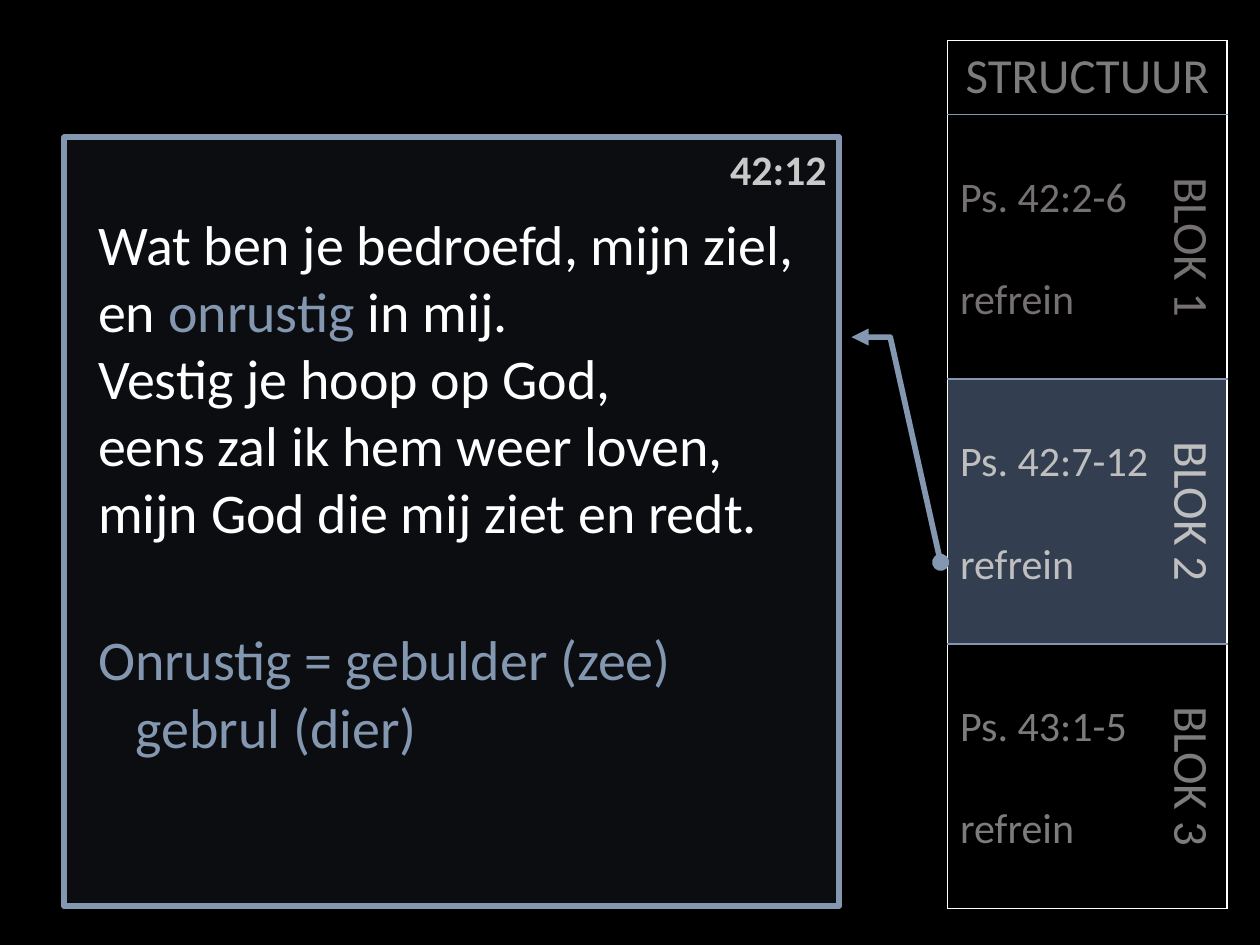
from pptx import Presentation
from pptx.dml.color import RGBColor
from pptx.enum.shapes import MSO_SHAPE
from pptx.enum.text import MSO_ANCHOR, PP_ALIGN
from pptx.oxml.ns import qn
from pptx.util import Inches, Pt
from lxml.etree import SubElement

FONT = "Calibri"
COLORS = {
    "black": "000000",
    "white": "FFFFFF",
    "blue": "8497B0",
    "panel": "222A35",
    "active": "333F50",
    "gray": "7C7C7C",
    "warm": "767171",
    "light": "BFBFBF",
    "verse": "C9C9C9",
}
BLOCKS = [
    ("Ps. 42:2-6", "BLOK 1", "warm", None),
    ("Ps. 42:7-12", "BLOK 2", "light", "active"),
    ("Ps. 43:1-5", "BLOK 3", "gray", None),
]
VERSE = [
    [("Wat ben je bedroefd, mijn ziel,", "white")],
    [("en ", "white"), ("onrustig ", "blue"), ("in mij.", "white")],
    [("Vestig je hoop op God,", "white")],
    [("eens zal ik hem weer loven,", "white")],
    [("mijn God die mij ziet en redt.", "white")],
]
BLANK_LINE = Pt(29.3)


def rgb(name):
    return RGBColor.from_string(COLORS[name])


def add_run(p, text, size, color, bold=False):
    r = p.add_run()
    r.text = text
    r.font.name = FONT
    r.font.size = Pt(size)
    r.font.bold = bold
    r.font.color.rgb = rgb(color)


def fill_text(tf, lines, size, align=PP_ALIGN.LEFT, bold=False):
    for i, runs in enumerate(lines):
        p = tf.paragraphs[0] if i == 0 else tf.add_paragraph()
        p.alignment = align
        for text, color in runs:
            add_run(p, text, size, color, bold)


def add_text(slide, box, lines, size, **style):
    tf = slide.shapes.add_textbox(*map(Inches, box)).text_frame
    tf.word_wrap = True
    fill_text(tf, lines, size, **style)
    return tf


def style_cell(cell, fill=None, **sides):
    tcPr = cell._tc.get_or_add_tcPr()
    for side in "LRTB":
        color = sides.get(side)
        ln = SubElement(tcPr, qn(f"a:ln{side}"), w=str(Pt(1)))
        if color:
            solid = SubElement(ln, qn("a:solidFill"))
            SubElement(solid, qn("a:srgbClr"), val=COLORS[color])
        else:
            SubElement(ln, qn("a:noFill"))
    if fill:
        cell.fill.solid()
        cell.fill.fore_color.rgb = rgb(fill)
    else:
        cell.fill.background()


def add_structure(slide, left, top, widths, heights):
    table = slide.shapes.add_table(
        len(heights), len(widths), Inches(left), Inches(top),
        Inches(sum(widths)), Inches(sum(heights))).table
    table.first_row = table.horz_banding = False
    for col, width in zip(table.columns, widths):
        col.width = Inches(width)
    for row, height in zip(table.rows, heights):
        row.height = Inches(height)

    header = table.cell(0, 0)
    header.merge(table.cell(0, 1))
    fill_text(header.text_frame, [[("STRUCTUUR", "gray")]], 28, PP_ALIGN.CENTER)
    style_cell(header, L="white", R="white", T="white", B="blue")
    style_cell(table.cell(0, 1), R="white", T="white", B="blue")

    for i, (psalm, block, color, fill) in enumerate(BLOCKS, 1):
        bottom = "white" if i == len(BLOCKS) else "blue"
        verses, label = table.cell(i, 0), table.cell(i, 1)
        verses.margin_top = Inches(0.05) + BLANK_LINE
        fill_text(verses.text_frame, [[(psalm, color)], [("refrein", color)]], 24)
        verses.text_frame.paragraphs[1].space_before = BLANK_LINE
        style_cell(verses, fill, L="white", T="blue", B=bottom)
        fill_text(label.text_frame, [[(block, color)]], 28, PP_ALIGN.CENTER)
        label.vertical_anchor = MSO_ANCHOR.MIDDLE
        label._tc.get_or_add_tcPr().set("vert", "vert")
        style_cell(label, fill, R="white", T="blue", B=bottom)


def add_callout(slide, box):
    sp = slide.shapes.add_shape(MSO_SHAPE.LINE_CALLOUT_2, *map(Inches, box))
    sp.shadow.inherit = False
    for i, value in enumerate([0.26, 1.016, 0.26, 1.066, 0.553, 1.131]):
        sp.adjustments[i] = value
    sp.fill.solid()
    sp.fill.fore_color.rgb = rgb("panel")
    clr = sp._element.spPr.find(qn("a:solidFill")).find(qn("a:srgbClr"))
    SubElement(clr, qn("a:alpha"), val="33000")
    sp.line.color.rgb = rgb("blue")
    sp.line.width = Pt(3.25)
    ln = sp.line._get_or_add_ln()
    SubElement(ln, qn("a:headEnd"), type="triangle")
    SubElement(ln, qn("a:tailEnd"), type="oval")


def add_verse(slide, left, top, width, height):
    add_callout(slide, (left, top, width, height))
    add_text(slide, (left + width - 1.18, top, 1.18, 0.5),
             [[("42:12", "verse")]], 24, align=PP_ALIGN.RIGHT, bold=True)
    add_text(slide, (left + 0.17, top + 0.52, 5.81, 2.79), VERSE, 32)
    note = add_text(slide, (left + 0.17, top + 3.82, 5.23, 1.18),
                    [[("Onrustig = gebulder (zee)", "blue")]], 32)
    p = note.paragraphs[0]
    pPr = p._p.get_or_add_pPr()
    pPr.set("marL", str(Inches(0.3)))
    pPr.set("indent", str(-Inches(0.3)))
    p.add_line_break()
    add_run(p, "gebrul (dier)", 32, "blue")


def main():
    prs = Presentation()
    prs.slide_width, prs.slide_height = Inches(10), Inches(7.5)
    slide = prs.slides.add_slide(prs.slide_layouts[6])
    slide.background.fill.solid()
    slide.background.fill.fore_color.rgb = rgb("black")
    add_structure(slide, 7.52, 0.32, [1.77, 0.45], [0.59] + [2.1] * len(BLOCKS))
    add_verse(slide, 0.51, 1.09, 6.15, 6.1)
    prs.save("out.pptx")


if __name__ == "__main__":
    main()
